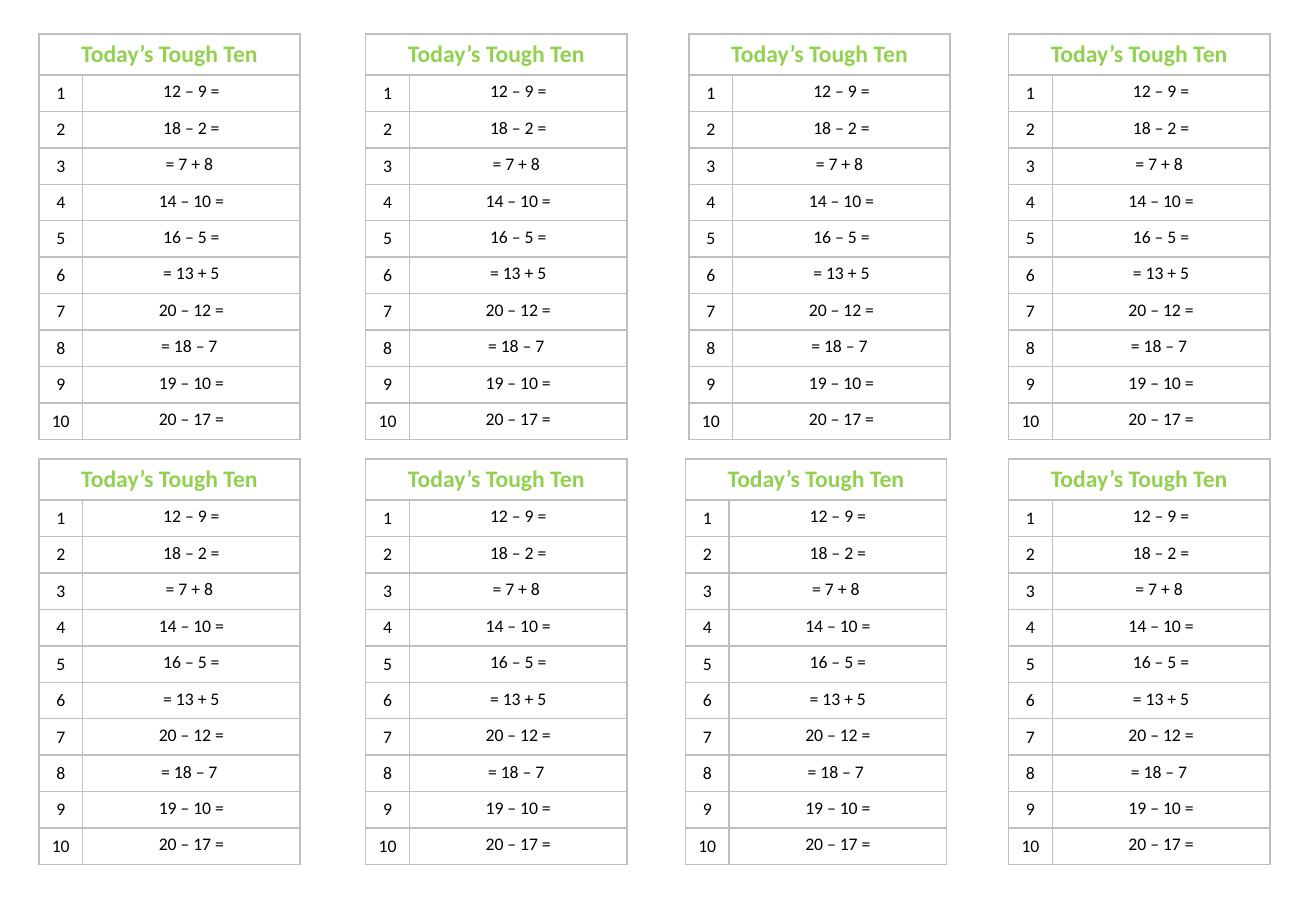
from lxml.etree import SubElement
from pptx import Presentation
from pptx.dml.color import RGBColor
from pptx.enum.text import MSO_ANCHOR as ANCHOR, PP_ALIGN as ALIGN
from pptx.oxml.ns import qn
from pptx.util import Inches, Pt

GREEN = RGBColor(0x92, 0xD0, 0x50)
BLACK = RGBColor(0x00, 0x00, 0x00)
GREY = RGBColor(0xBF, 0xBF, 0xBF)

TITLE = "Today’s Tough Ten"
QUESTIONS = ["12 – 9 =", "18 – 2 =", "= 7 + 8 ", "14 – 10 =", "16 – 5 =",
             "= 13 + 5", "20 – 12 =", "= 18 – 7 ", "19 – 10 =", "20 – 17 ="]

# Left edges of the cards, by row top
CARD_ROWS = {0.28: [0.32, 3.01, 5.67, 8.3],
             3.78: [0.32, 3.01, 5.64, 8.3]}
COL_WIDTHS = [0.36, 1.79]
HEADER_H, ROW_H = 0.33, 0.3


def write(cell, text, size=10.5, color=BLACK, bold=False, anchor=ANCHOR.TOP):
    cell.vertical_anchor = anchor
    p = cell.text_frame.paragraphs[0]
    p.alignment = ALIGN.CENTER
    r = p.add_run()
    r.text = text
    r.font.name = "Calibri"
    r.font.size = Pt(size)
    r.font.bold = bold
    r.font.color.rgb = color


class Sheet:
    def __init__(self, slide, border=GREY, border_width=1):
        self.s = slide
        self.border = border
        self.border_width = border_width

    def outline(self, cell):
        """Draw all four borders and leave the cell unfilled."""
        tc_pr = cell._tc.get_or_add_tcPr()
        for side in ("lnL", "lnR", "lnT", "lnB"):
            ln = SubElement(tc_pr, qn(f"a:{side}"), w=str(Pt(self.border_width)))
            fill = SubElement(ln, qn("a:solidFill"))
            SubElement(fill, qn("a:srgbClr"), val=str(self.border))
        cell.fill.background()

    def card(self, left, top):
        """Add one table of ten numbered questions."""
        n = len(QUESTIONS)
        table = self.s.shapes.add_table(
            n + 1, 2, Inches(left), Inches(top),
            Inches(sum(COL_WIDTHS)), Inches(HEADER_H + n * ROW_H)).table
        table.first_row = table.horz_banding = False
        for col, width in zip(table.columns, COL_WIDTHS):
            col.width = Inches(width)
        for i, row in enumerate(table.rows):
            row.height = Inches(ROW_H if i else HEADER_H)
        for cell in table.iter_cells():
            self.outline(cell)

        # Header
        header = table.cell(0, 0)
        header.merge(table.cell(0, 1))
        write(header, TITLE, size=14, color=GREEN, bold=True)

        # Questions
        for i, question in enumerate(QUESTIONS, 1):
            write(table.cell(i, 0), str(i), anchor=ANCHOR.MIDDLE)
            write(table.cell(i, 1), question)


def main():
    prs = Presentation()
    prs.slide_width, prs.slide_height = Inches(10.83), Inches(7.5)
    sheet = Sheet(prs.slides.add_slide(prs.slide_layouts[6]))
    for top, lefts in CARD_ROWS.items():
        for left in lefts:
            sheet.card(left, top)
    prs.save("out.pptx")


if __name__ == "__main__":
    main()
